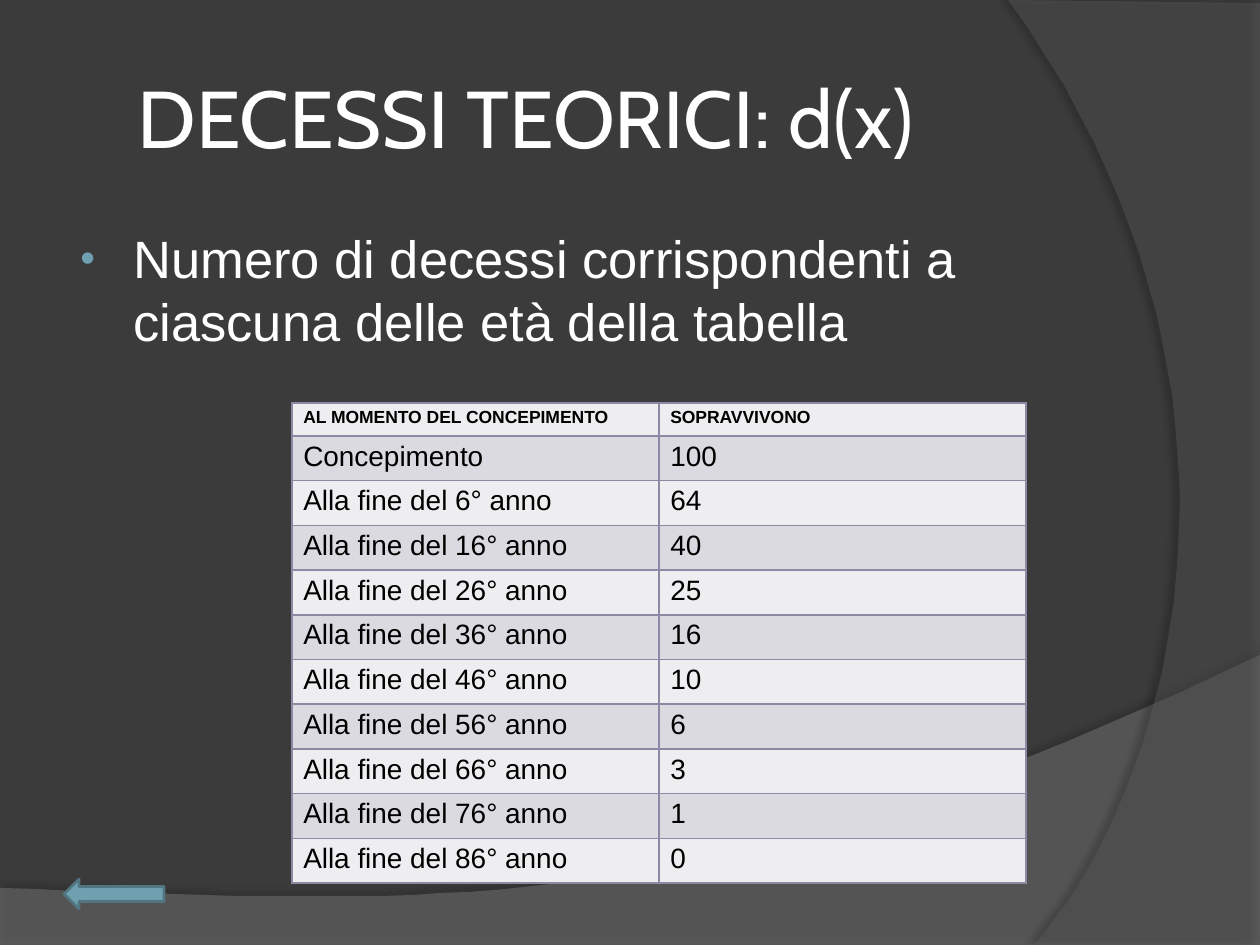
from dataclasses import dataclass

from lxml.etree import SubElement
from pptx import Presentation
from pptx.dml.color import RGBColor
from pptx.enum.shapes import MSO_SHAPE
from pptx.enum.text import MSO_ANCHOR, PP_ALIGN
from pptx.oxml.ns import qn
from pptx.util import Emu, Inches, Pt

EMU_PER_PX = 914400 / 126
COLORS = {
    "background": "3B3B3B",
    "lower_wave": "7F7F7F",
    "right_wave": "5E5E5E",
    "shadow": "000000",
    "text": "FFFFFF",
    "accent": "6EA0B0",
    "arrow_line": "517682",
    "cell_text": "000000",
    "light_row": "EEEDF0",
    "dark_row": "DBDAE0",
    "border": "8D89A4",
}
Point = tuple[int, int]


@dataclass(frozen=True)
class Wave:
    """A polygon whose closing edge is a cubic curve from its last corner."""
    color: str
    opacity: int
    corners: list[Point]
    curve: list[Point]
    shadow_opacity: int
    shadow_distance: float
    shadow_direction: int


@dataclass(frozen=True)
class Row:
    moment: str
    survivors: str


WAVES = [
    Wave("lower_wave", 45, [(0, 888), (0, 945), (1260, 945), (1260, 655)],
         [(704, 919), (493, 906), (0, 888)], 35, 3.5, 270),
    Wave("right_wave", 40, [(1260, 3), (1260, 945), (1034, 945)],
         [(1178, 780), (1283, 378), (1008, 0)], 45, 4, 180),
]
SURVIVORS = [64, 40, 25, 16, 10, 6, 3, 1, 0]
ROWS = [
    Row("AL MOMENTO DEL CONCEPIMENTO", "SOPRAVVIVONO"),
    Row("Concepimento", "100"),
    *(Row(f"Alla fine del {age}° anno", str(count))
      for age, count in zip(range(6, 87, 10), SURVIVORS)),
]


def px(length: float) -> Emu:
    return Emu(round(length * EMU_PER_PX))


def rgb(name: str) -> RGBColor:
    return RGBColor.from_string(COLORS[name])


def add_element(parent, tag: str, **attributes):
    return SubElement(parent, qn(tag), {key: str(value) for key, value in attributes.items()})


def add_color(parent, name: str, opacity: int = 100) -> None:
    color = add_element(parent, "a:srgbClr", val=COLORS[name])
    if opacity < 100:
        add_element(color, "a:alpha", val=opacity * 1000)


def curve_points(start: Point, curve: list[Point], steps: int = 40) -> list[Point]:
    """Sample a cubic Bezier curve, leaving out its start."""
    points = []
    for step in range(1, steps + 1):
        t = step / steps
        weights = ((1 - t) ** 3, 3 * t * (1 - t) ** 2, 3 * t * t * (1 - t), t ** 3)
        points.append(tuple(round(sum(w * p[axis] for w, p in zip(weights, [start, *curve])), 1)
                            for axis in (0, 1)))
    return points


def draw_wave(slide, wave: Wave) -> None:
    first, *others = wave.corners
    builder = slide.shapes.build_freeform(*first, scale=EMU_PER_PX)
    builder.add_line_segments(others + curve_points(wave.corners[-1], wave.curve), close=True)
    shape = builder.convert_to_shape()
    shape.fill.solid()
    shape.fill.fore_color.rgb = rgb(wave.color)
    fill_color = shape.fill._xPr.find(qn("a:solidFill"))[0]
    add_element(fill_color, "a:alpha", val=wave.opacity * 1000)
    shape.line.fill.background()
    shape.shadow.inherit = False
    effects = shape._element.spPr.find(qn("a:effectLst"))
    shadow = add_element(effects, "a:outerShdw", blurRad=Pt(4), dist=Pt(wave.shadow_distance),
                         dir=wave.shadow_direction * 60000, algn="ctr", rotWithShape=0)
    add_color(shadow, "shadow", wave.shadow_opacity)


def set_font(paragraph, name: str, size: int, color: str, bold: bool = False) -> None:
    font = paragraph.font
    font.name, font.size, font.bold = name, Pt(size), bold
    font.color.rgb = rgb(color)


def draw_title(slide) -> None:
    frame = slide.shapes.add_textbox(px(63), px(38), px(1029), px(157)).text_frame
    frame.word_wrap = True
    frame.vertical_anchor = MSO_ANCHOR.MIDDLE
    frame.margin_left = frame.margin_top = frame.margin_bottom = px(6)
    frame.margin_right = px(110)
    title = frame.paragraphs[0]
    title.text = "DECESSI TEORICI: d(x)"
    title.alignment = PP_ALIGN.CENTER
    set_font(title, "Cabin", 46, "text")


def draw_definition(slide) -> None:
    frame = slide.shapes.add_textbox(px(63), px(220), px(1029), px(624)).text_frame
    frame.word_wrap = True
    definition = frame.paragraphs[0]
    definition.text = "Numero di decessi corrispondenti a ciascuna delle età della tabella"
    definition.space_before = Pt(6)
    set_font(definition, "Arial", 30, "text")
    properties = definition._p.get_or_add_pPr()
    properties.set("marL", str(px(58)))
    properties.set("indent", str(px(-53)))
    bullet = [add_element(properties, "a:buClr"),
              add_element(properties, "a:buSzPct", val=80000),
              add_element(properties, "a:buFont", typeface="Arial"),
              add_element(properties, "a:buChar", char="•")]
    add_color(bullet[0], "accent")
    # The schema wants the bullet before the default run properties.
    properties.append(properties.find(qn("a:defRPr")))


def draw_back_arrow(slide) -> None:
    arrow = slide.shapes.add_shape(MSO_SHAPE.RIGHT_ARROW, px(64), px(879), px(100), px(30))
    arrow.rotation = 180
    arrow.fill.solid()
    arrow.fill.fore_color.rgb = rgb("accent")
    arrow.line.color.rgb = rgb("arrow_line")
    arrow.line.width = Pt(1.5)
    arrow.shadow.inherit = False


def draw_cell(cell, text: str, size: int, bold: bool, fill: str) -> None:
    cell.margin_left = cell.margin_right = Inches(0.09)
    cell.margin_top = cell.margin_bottom = Inches(0.04)
    paragraph = cell.text_frame.paragraphs[0]
    paragraph.text = text
    set_font(paragraph, "Arial", size, "cell_text", bold)
    for side in ("a:lnL", "a:lnR", "a:lnT", "a:lnB"):
        border = add_element(cell._tc.get_or_add_tcPr(), side, w=Pt(1))
        add_color(add_element(border, "a:solidFill"), "border")
    cell.fill.solid()
    cell.fill.fore_color.rgb = rgb(fill)


def draw_table(slide) -> None:
    header_height, body_height = 33, 447
    table = slide.shapes.add_table(len(ROWS), 2, px(292), px(403), px(734),
                                   px(header_height + body_height)).table
    table.first_row = table.horz_banding = False
    for index, row in enumerate(ROWS):
        is_header = index == 0
        table.rows[index].height = px(header_height if is_header
                                      else body_height / (len(ROWS) - 1))
        fill = "dark_row" if index % 2 else "light_row"
        for column, text in enumerate((row.moment, row.survivors)):
            draw_cell(table.cell(index, column), text, 10 if is_header else 16, is_header, fill)


def main() -> None:
    presentation = Presentation()
    presentation.slide_width, presentation.slide_height = px(1260), px(945)
    slide = presentation.slides.add_slide(presentation.slide_layouts[6])
    slide.background.fill.solid()
    slide.background.fill.fore_color.rgb = rgb("background")
    for wave in WAVES:
        draw_wave(slide, wave)
    draw_title(slide)
    draw_definition(slide)
    draw_back_arrow(slide)
    draw_table(slide)
    presentation.save("out.pptx")


if __name__ == "__main__":
    main()
